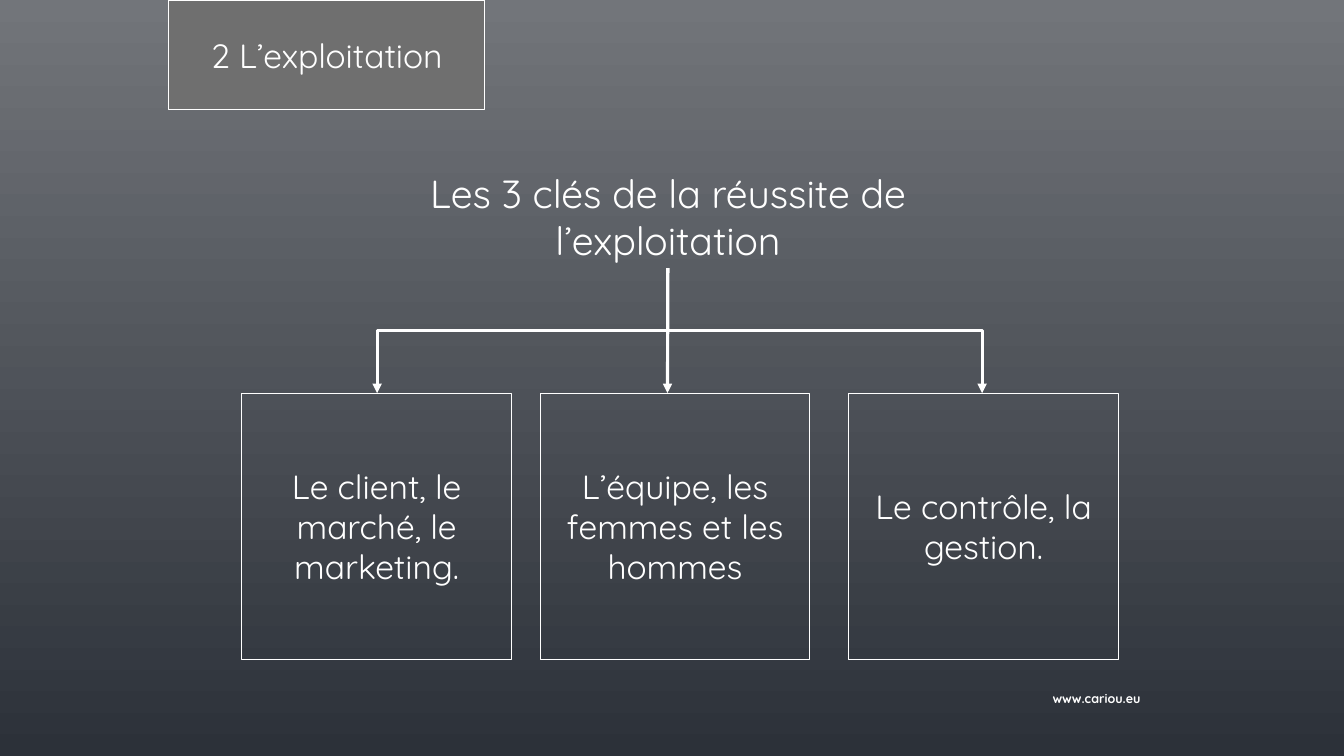
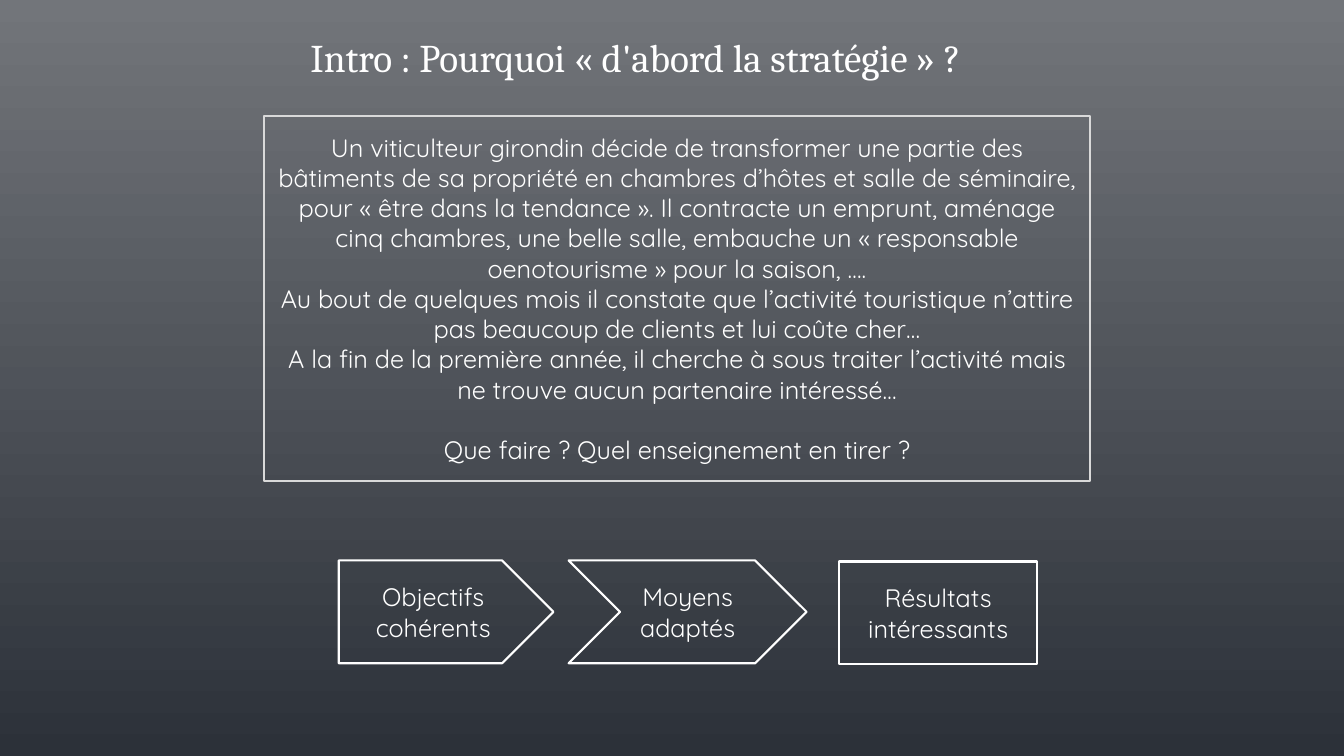
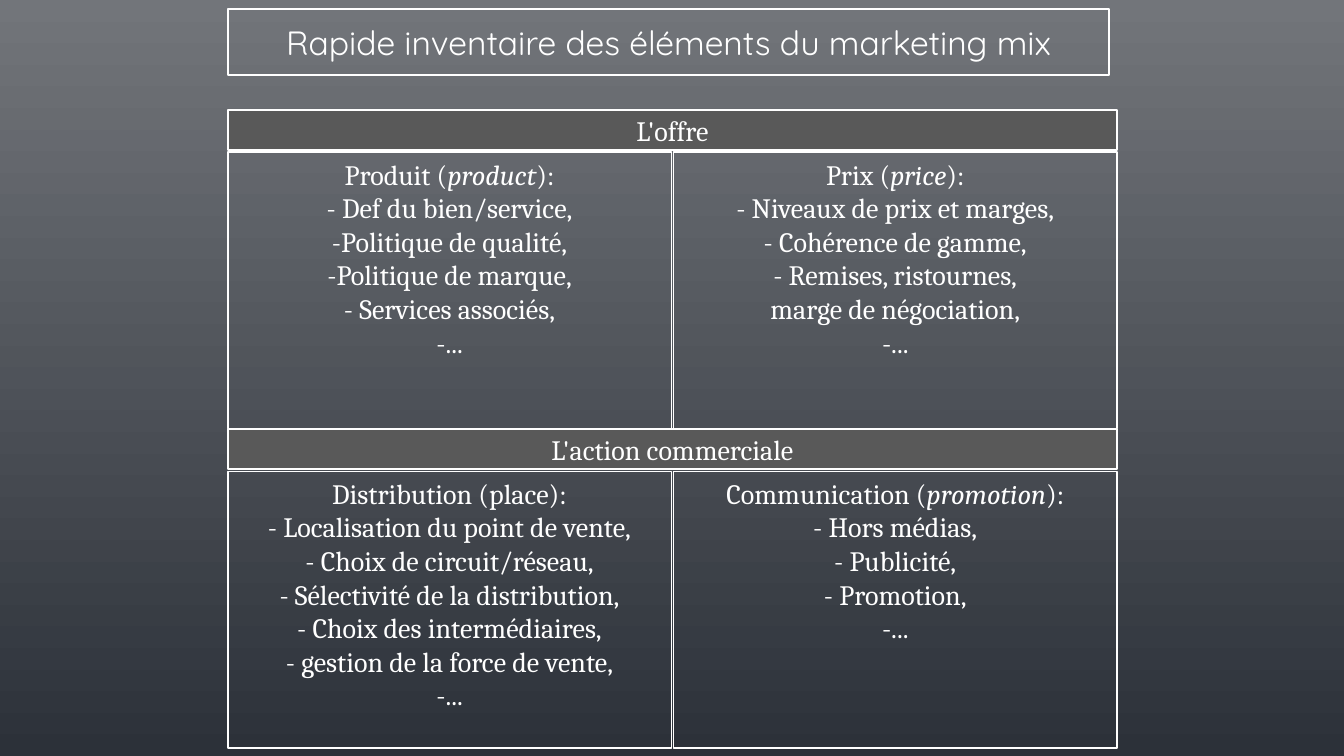
import dataclasses

import pptx
import pptx.dml.color
import pptx.enum.shapes
import pptx.enum.text
import pptx.oxml
import pptx.oxml.ns
import pptx.util

Inches = pptx.util.Inches
Pt = pptx.util.Pt
Shape = pptx.enum.shapes.MSO_SHAPE
Connector = pptx.enum.shapes.MSO_CONNECTOR
Align = pptx.enum.text.PP_ALIGN
Anchor = pptx.enum.text.MSO_ANCHOR


@dataclasses.dataclass(frozen=True)
class Theme:
    sans: str = "Quicksand"
    serif: str = "Cambria"
    white: str = "FFFFFF"
    frame: str = "D9D9D9"
    tab: str = "6F6F6F"
    band: str = "595959"
    top: str = "72757A"
    bottom: str = "2C3139"
    footer_size: int = 9
    body_size: int = 18
    cell_size: int = 20
    heading_size: int = 24
    title_size: int = 28
    hairline: float = 0.75
    thin: float = 1
    outline: float = 1.5
    arrow: float = 2.25


THEME = Theme()


def rgb(code):
    return pptx.dml.color.RGBColor.from_string(code)


def inches(box):
    return [Inches(value) for value in box]


def write(shape, paras, size, font=THEME.sans, align=Align.CENTER,
          anchor=Anchor.MIDDLE, wrap=True, bold=None):
    """Write paragraphs; words between asterisks are italic."""
    frame = shape.text_frame
    frame.word_wrap = wrap
    frame.vertical_anchor = anchor
    for index, text in enumerate(paras):
        para = frame.paragraphs[0] if index == 0 else frame.add_paragraph()
        para.alignment = align
        for part, words in enumerate(text.split("*")):
            span = para.add_run()
            span.text = words
            span.font.name = font
            span.font.size = Pt(size)
            span.font.bold = bold
            span.font.italic = True if part % 2 else None
            span.font.color.rgb = rgb(THEME.white)


def add_label(page, box, text, size, **style):
    label = page.shapes.add_textbox(*inches(box))
    write(label, [text], size, **style)
    return label


def add_panel(page, box, paras, size, kind=Shape.RECTANGLE, fill=None,
              line=THEME.white, width=THEME.outline, **style):
    panel = page.shapes.add_shape(kind, *inches(box))
    panel.shadow.inherit = False
    if fill:
        panel.fill.solid()
        panel.fill.fore_color.rgb = rgb(fill)
    else:
        panel.fill.background()
    panel.line.color.rgb = rgb(line)
    panel.line.width = Pt(width)
    write(panel, paras, size, **style)
    return panel


def add_arrow(page, kind, start, end):
    arrow = page.shapes.add_connector(kind, *inches(start + end))
    arrow.line.color.rgb = rgb(THEME.white)
    arrow.line.width = Pt(THEME.arrow)
    properties = arrow._element.spPr
    head = pptx.oxml.ns.qn("a:tailEnd")
    arrow.line._get_or_add_ln().makeelement(head)
    line = arrow.line._get_or_add_ln()
    line.append(line.makeelement(head, {"type": "triangle"}))
    properties.append(properties.makeelement(pptx.oxml.ns.qn("a:effectLst")))
    return arrow


def add_branch(page, start, end):
    """Draw an elbow arrow that goes down, across, then down again."""
    (x1, y1), (x2, y2) = start, end
    drop, reach = y2 - y1, abs(x2 - x1)
    left = (x1 + x2 - drop) / 2
    top = (y1 + y2 - reach) / 2
    near, far = left, left + drop
    to_left = x2 < x1
    if not to_left:
        near, far = far, near
    branch = add_arrow(page, Connector.ELBOW, (near, top), (far, top + reach))
    degrees = 90 if to_left else 270
    branch._element.spPr.xfrm.set("rot", str(degrees * 60000))


def add_keys(page, box, title, keys):
    """Place a heading above key boxes, with arrows down to each of them."""
    left, top, width, height = box
    heading = add_label(page, (left + 1.14, top, 6.17, 1.03), title,
                        THEME.title_size, anchor=Anchor.TOP)
    side, depth = 2.67, 2.64
    key_top = top + height - depth
    for offset, text in keys:
        add_panel(page, (left + offset, key_top, side, depth), [text],
                  THEME.heading_size, width=THEME.hairline)
    trunk = (left + 4.22, top + 1.03)
    for reach in (-2.88, 3.12):
        add_branch(page, trunk, (trunk[0] + reach, key_top))
    stem = add_arrow(page, Connector.STRAIGHT, trunk, (trunk[0], key_top))
    stem.begin_connect(heading, 2)


def add_steps(page, box, steps):
    left, top, _, height = box
    for kind, offset, drop, width, paras in steps:
        add_panel(page, (left + offset, top + drop, width, height), paras,
                  THEME.body_size, kind=kind)


def add_mix(page, box, sections):
    """Place sections of one band above two equal cells."""
    left, top, width, height = box
    band, gap = 0.4, 0.02
    pitch = height / len(sections)
    cell_width = (width - gap) / 2
    cell_height = pitch - band - gap
    style = {"font": THEME.serif, "width": THEME.thin, "wrap": False}
    for row, (title, cells) in enumerate(sections):
        y = top + row * pitch
        for column, paras in enumerate(cells):
            x = left + column * (cell_width + gap)
            add_panel(page, (x, y + band + gap, cell_width, cell_height),
                      paras, THEME.cell_size, anchor=Anchor.TOP, **style)
        add_panel(page, (left, y, width, band), [title], THEME.cell_size,
                  fill=THEME.band, **style)


def build_keys_page(page):
    add_label(page, (9.66, 6.73, 1.75, 0.4), "www.cariou.eu",
              THEME.footer_size, align=Align.RIGHT, bold=True)
    add_panel(page, (1.67, 0, 3.14, 1.09), ["2 L’exploitation"],
              THEME.heading_size, fill=THEME.tab, width=THEME.hairline,
              wrap=False)
    add_keys(page, (2.4, 1.63, 8.69, 4.91),
             "Les 3 clés de la réussite de l’exploitation",
             [(0, "Le client, le marché, le marketing."),
              (2.96, "L’équipe, les femmes et les hommes"),
              (6.02, "Le contrôle, la gestion.")])


def build_story_page(page):
    add_label(page, (2.98, 0.28, 7.48, 0.57),
              "Intro : Pourquoi « d'abord la stratégie » ?", THEME.title_size,
              font=THEME.serif, align=Align.LEFT, anchor=Anchor.TOP)
    story = add_panel(page, (2.62, 1.15, 8.19, 3.62), [
        "Un viticulteur girondin décide de transformer une partie des "
        "bâtiments de sa propriété en chambres d’hôtes et salle de "
        "séminaire, pour « être dans la tendance ». Il contracte un "
        "emprunt, aménage cinq chambres, une belle salle, embauche un "
        "« responsable oenotourisme » pour la saison, ….",
        "Au bout de quelques mois il constate que l’activité touristique "
        "n’attire pas beaucoup de clients et lui coûte cher…",
        "A la fin de la première année, il cherche à sous traiter "
        "l’activité mais ne trouve aucun partenaire intéressé…",
        "Que faire ? Quel enseignement en tirer ?",
    ], THEME.body_size, line=THEME.frame)
    story.text_frame.paragraphs[-1].space_before = Pt(21.6)
    add_steps(page, (3.36, 5.56, 6.93, 1.02), [
        (Shape.PENTAGON, 0, 0, 2.13, ["Objectifs", "cohérents"]),
        (Shape.CHEVRON, 2.28, 0, 2.36, ["Moyens", "adaptés"]),
        (Shape.RECTANGLE, 4.96, 0.01, 1.97, ["Résultats", "intéressants"]),
    ])


def build_mix_page(page):
    add_panel(page, (2.26, 0.09, 8.74, 0.65),
              ["Rapide inventaire des éléments du marketing mix"],
              THEME.heading_size)
    add_mix(page, (2.26, 1.09, 8.82, 6.33), [
        ("L'offre", [
            ["Produit (*product*):", "- Def du bien/service,",
             "-Politique de qualité,", "-Politique de marque,",
             "- Services associés,", "-..."],
            ["Prix (*price*):", "- Niveaux de prix et marges,",
             "- Cohérence de gamme,", "- Remises, ristournes,",
             "marge de négociation,", "-..."],
        ]),
        ("L'action commerciale", [
            ["Distribution (place):", "- Localisation du point de vente,",
             "- Choix de circuit/réseau,", "- Sélectivité de la distribution,",
             "- Choix des intermédiaires,", "- gestion de la force de vente,",
             "-..."],
            ["Communication (*promotion*):", "- Hors médias,",
             "- Publicité,", "- Promotion,", "-..."],
        ]),
    ])


def set_background(master):
    fill = master.background.fill
    fill.gradient()
    fill.gradient_angle = 270
    for stop, color in zip(fill.gradient_stops, (THEME.top, THEME.bottom)):
        stop.color.rgb = rgb(color)


def main():
    deck = pptx.Presentation()
    deck.slide_width = Inches(13.33)
    deck.slide_height = Inches(7.5)
    set_background(deck.slide_master)
    blank = deck.slide_layouts[6]
    for build in (build_keys_page, build_story_page, build_mix_page):
        build(deck.slides.add_slide(blank))
    deck.save("out.pptx")


if __name__ == "__main__":
    main()
